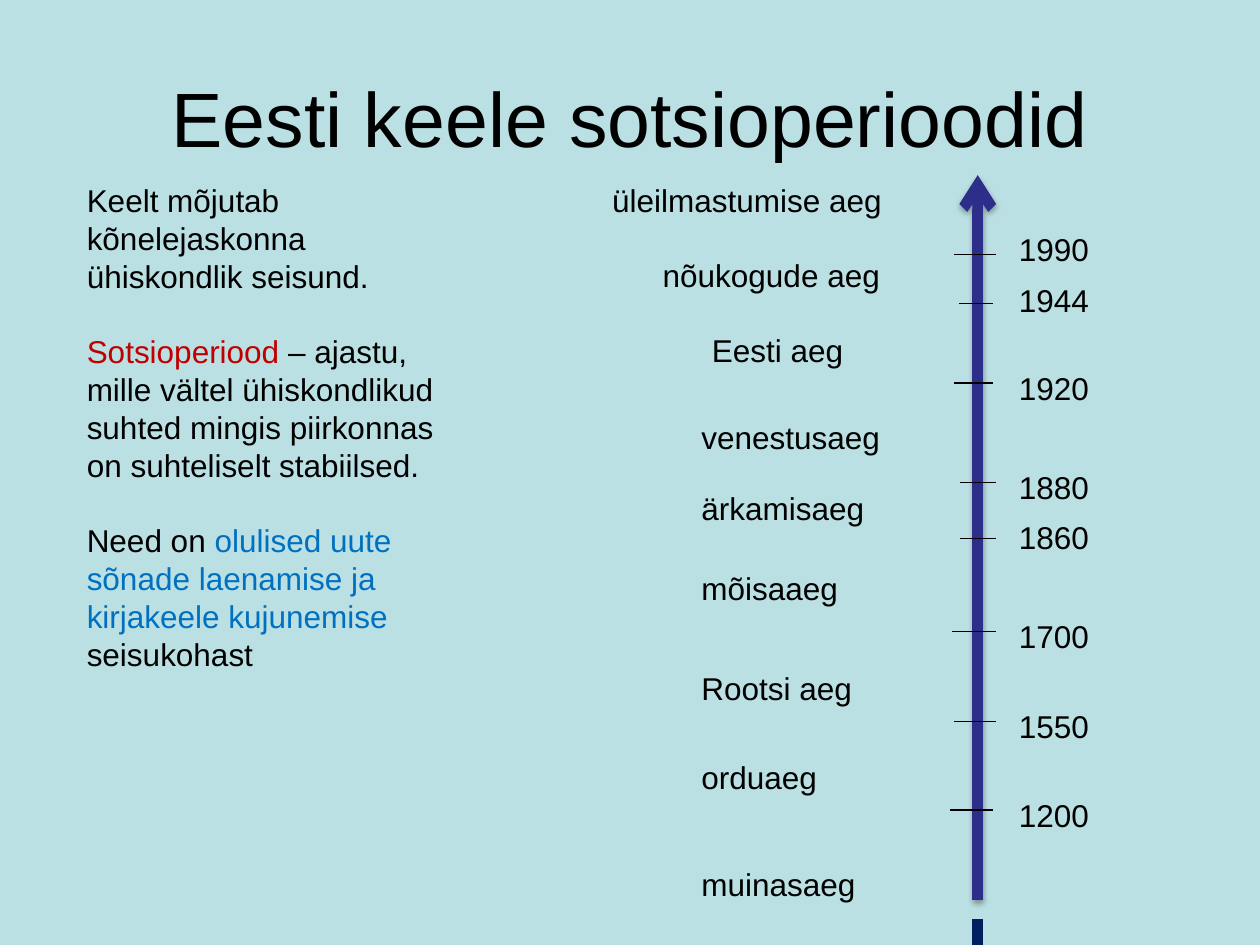
from dataclasses import dataclass

from lxml import etree
from pptx import Presentation
from pptx.dml.color import RGBColor
from pptx.enum.shapes import MSO_CONNECTOR
from pptx.enum.text import MSO_ANCHOR, MSO_AUTO_SIZE, PP_ALIGN
from pptx.oxml.ns import qn
from pptx.util import Cm, Pt

STRAIGHT = MSO_CONNECTOR.STRAIGHT
MIDDLE = MSO_ANCHOR.MIDDLE
GROW = MSO_AUTO_SIZE.SHAPE_TO_FIT_TEXT
CENTER = PP_ALIGN.CENTER
TITLE_ONLY = 5


@dataclass(frozen=True)
class Theme:
    font: str = "Arial"
    title_size: float = 44
    body_size: float = 18
    leading: float = 1.2
    background: str = "BBE0E3"
    ink: str = "000000"
    term: str = "C00000"
    emphasis: str = "0070C0"
    axis: str = "2D2D8A"
    axis_root: str = "002060"
    axis_width: float = 6
    tick_width: float = 0.75


THEME = Theme()
AXIS_X = 19.71
YEAR_LEFT = 20.29
LABEL_HEIGHT = 1.02

# name, left, top, right edge
PERIODS = [
    ("üleilmastumise aeg", 12.09, 3.53, 18.49),
    ("nõukogude aeg", 13.11, 5.03, 18.49),
    ("Eesti aeg", 14.1, 6.55, 18.49),
    ("venestusaeg", 13.89, 8.31, 18.49),
    ("ärkamisaeg", 13.89, 9.73, 18.08),
    ("mõisaaeg", 13.89, 11.35, 18.49),
    ("Rootsi aeg", 13.89, 13.36, 18.08),
    ("orduaeg", 13.89, 15.16, 18.08),
    ("muinasaeg", 13.89, 17.32, 18.49),
]

# year, label top, label width, tick start, tick end, tick height on the axis
YEARS = [
    ("1990", 4.52, 3, 19.23, 20.07, 5.13),
    ("1944", 5.54, 3, 19.33, 20.02, 6.12),
    ("1920", 7.32, 3, 19.23, 20.02, 7.72),
    ("1880", 9.32, 2.59, 19.35, 20.07, 9.73),
    ("1860", 10.31, 2.59, 19.35, 20.07, 10.85),
    ("1700", 12.32, 3, 19.2, 20.07, 12.73),
    ("1550", 14.12, 3, 19.23, 20.07, 14.55),
    ("1200", 15.93, 3.61, 19.15, 20.02, 16.33),
]

EXPLANATION = [
    [("Keelt mõjutab kõnelejaskonna ühiskondlik seisund.", THEME.ink)],
    [
        ("Sotsioperiood", THEME.term),
        (" – ajastu, mille vältel ühiskondlikud suhted mingis piirkonnas "
         "on suhteliselt stabiilsed.", THEME.ink),
    ],
    [
        ("Need on ", THEME.ink),
        ("olulised uute sõnade laenamise ja kirjakeele kujunemise ", THEME.emphasis),
        ("seisukohast", THEME.ink),
    ],
]


def add_spans(para, spans, size):
    para.line_spacing = Pt(size * THEME.leading)
    for text, color in spans:
        span = para.add_run()
        span.text = text
        span.font.name = THEME.font
        span.font.size = Pt(size)
        span.font.color.rgb = RGBColor.from_string(color)


def add_title(page, text):
    title = page.shapes.title
    title.left, title.top, title.width, title.height = Cm(1.27), Cm(0.76), Cm(22.86), Cm(3.18)
    title.text_frame.vertical_anchor = MIDDLE
    para = title.text_frame.paragraphs[0]
    para.alignment = CENTER
    add_spans(para, [(text, THEME.ink)], THEME.title_size)


def add_text(page, left, top, width, height, paragraphs):
    """Add a text box whose paragraphs are one line apart."""
    box = page.shapes.add_textbox(Cm(left), Cm(top), Cm(width), Cm(height))
    frame = box.text_frame
    frame.word_wrap = True
    frame.auto_size = GROW
    for index, spans in enumerate(paragraphs):
        para = frame.add_paragraph() if index else frame.paragraphs[0]
        if index:
            para.space_before = Pt(THEME.body_size * THEME.leading)
        add_spans(para, spans, THEME.body_size)


def add_label(page, text, left, top, width):
    add_text(page, left, top, width, LABEL_HEIGHT, [[(text, THEME.ink)]])


def add_line(page, start, end, color, width):
    """Add a line and return it with its empty effect list."""
    line = page.shapes.add_connector(STRAIGHT, *map(Cm, start + end))
    line.line.color.rgb = RGBColor.from_string(color)
    line.line.width = Pt(width)
    effects = etree.SubElement(line._element.spPr, qn("a:effectLst"))
    return line, effects


def add_axis(page):
    arrow, effects = add_line(page, (AXIS_X, 18.14), (AXIS_X, 3.53), THEME.axis, THEME.axis_width)
    etree.SubElement(arrow.line._get_or_add_ln(), qn("a:tailEnd"), type="arrow")
    shadow = etree.SubElement(
        effects, qn("a:outerShdw"), blurRad=str(Pt(3.1)), dist=str(Pt(1.8)),
        dir="5400000", rotWithShape="0",
    )
    color = etree.SubElement(shadow, qn("a:srgbClr"), val=THEME.ink)
    etree.SubElement(color, qn("a:alpha"), val="35000")
    add_line(page, (AXIS_X, 18.52), (AXIS_X, 19.05), THEME.axis_root, THEME.axis_width)


def main():
    deck = Presentation()
    deck.slide_width, deck.slide_height = Cm(25.4), Cm(19.05)
    page = deck.slides.add_slide(deck.slide_layouts[TITLE_ONLY])
    page.background.fill.solid()
    page.background.fill.fore_color.rgb = RGBColor.from_string(THEME.background)

    add_title(page, "Eesti keele sotsioperioodid")
    add_axis(page)
    for year, top, width, start, end, height in YEARS:
        add_line(page, (start, height), (end, height), THEME.ink, THEME.tick_width)
        add_label(page, year, YEAR_LEFT, top, width)
    for name, left, top, right in PERIODS:
        add_label(page, name, left, top, right - left)
    add_text(page, 1.5, 3.53, 8, 10.26, EXPLANATION)
    deck.save("out.pptx")


if __name__ == "__main__":
    main()
